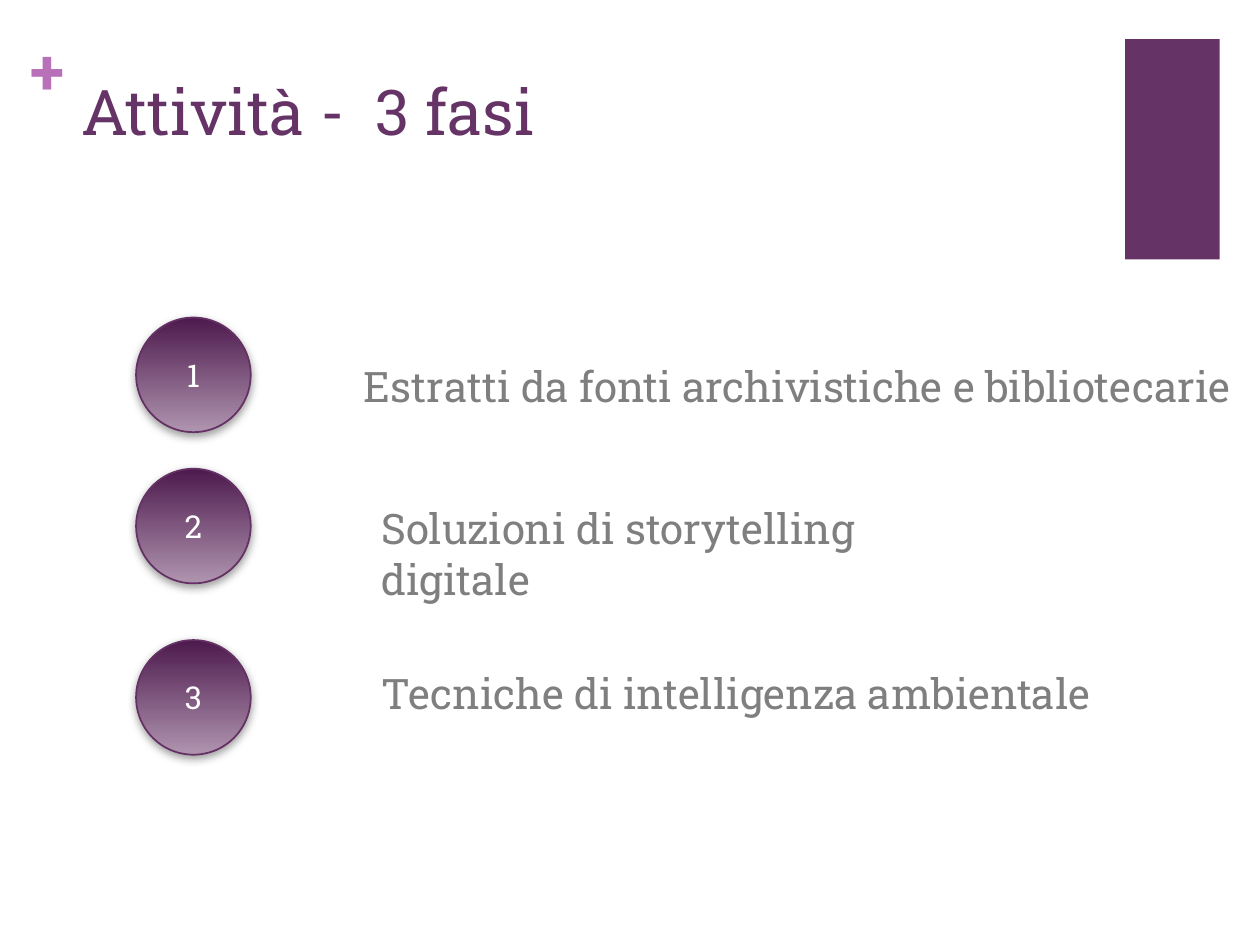
from lxml.etree import SubElement as Sub
from pptx import Presentation
from pptx.dml.color import RGBColor as RGB
from pptx.enum.shapes import MSO_SHAPE as Shape
from pptx.enum.text import MSO_ANCHOR as Anchor, PP_ALIGN as Align
from pptx.oxml.ns import qn
from pptx.util import Inches, Pt

FONT = "Roboto Slab"
HEX = {
    "plum": "663366", "pink": "B870B8", "gray": "7F7F7F", "white": "FFFFFF",
    "dark": "4D1A4D", "pale": "AF94AF", "edge": "653165", "shade": "808080",
}
TITLE = "Attività -  3 fasi"
STEPS = [
    ("Estratti da fonti archivistiche e bibliotecarie", 2.52, (2.79, 2.81, 7.25, 0.5)),
    ("Soluzioni di storytelling digitale", 3.72, (2.93, 3.94, 5.08, 0.5)),
    ("Tecniche di intelligenza ambientale", 5.08, (2.93, 5.25, 5.99, 0.5)),
]
DISC_LEFT, DISC_SIZE = 1.08, 0.91


def color(name):
    return RGB.from_string(HEX[name])


def write(frame, text, size, name, bold=False):
    frame.word_wrap = True
    run = frame.paragraphs[0].add_run()
    run.text = text
    font = run.font
    font.name, font.size, font.bold = FONT, Pt(size), bold
    font.color.rgb = color(name)


def label(slide, box, text, size, name, bold=False, inset=True):
    frame = slide.shapes.add_textbox(*map(Inches, box)).text_frame
    if not inset:
        frame.margin_left = frame.margin_right = 0
        frame.margin_top = frame.margin_bottom = 0
    write(frame, text, size, name, bold)


def shade(shape):
    shape.shadow.inherit = False
    glow = Sub(shape._element.spPr.find(qn("a:effectLst")), qn("a:outerShdw"),
               blurRad=str(Pt(5)), dist=str(Pt(2)), dir="5400000", rotWithShape="0")
    tint = Sub(glow, qn("a:srgbClr"), val=HEX["shade"])
    Sub(tint, qn("a:alpha"), val="75000")


def disc(slide, top, text):
    box = (DISC_LEFT, top, DISC_SIZE, DISC_SIZE)
    shape = slide.shapes.add_shape(Shape.OVAL, *map(Inches, box))
    shape.fill.gradient()
    shape.fill.gradient_angle = 270
    for stop, name, place in zip(shape.fill.gradient_stops, ("dark", "pale"), (0, 1)):
        stop.color.rgb = color(name)
        stop.position = place
    shape.line.color.rgb = color("edge")
    shape.line.width = Pt(1)
    shade(shape)
    frame = shape.text_frame
    frame.vertical_anchor = Anchor.MIDDLE
    frame.paragraphs[0].alignment = Align.CENTER
    write(frame, text, 18, "white")


def main():
    deck = Presentation()
    deck.slide_width, deck.slide_height = Inches(10), Inches(7.5)
    slide = deck.slides.add_slide(deck.slide_layouts[6])

    block = slide.shapes.add_shape(Shape.RECTANGLE, *map(Inches, (8.93, 0.31, 0.75, 1.75)))
    block.fill.solid()
    block.fill.fore_color.rgb = color("plum")
    block.line.fill.background()
    block.shadow.inherit = False

    label(slide, (0.24, 0.25, 0.29, 0.61), "+", 36, "pink", bold=True, inset=False)
    label(slide, (0.55, 0.53, 8.26, 1.22), TITLE, 36, "plum")

    for num, (text, top, box) in enumerate(STEPS, 1):
        disc(slide, top, str(num))
        label(slide, box, text, 24, "gray")

    deck.save("out.pptx")


if __name__ == "__main__":
    main()
